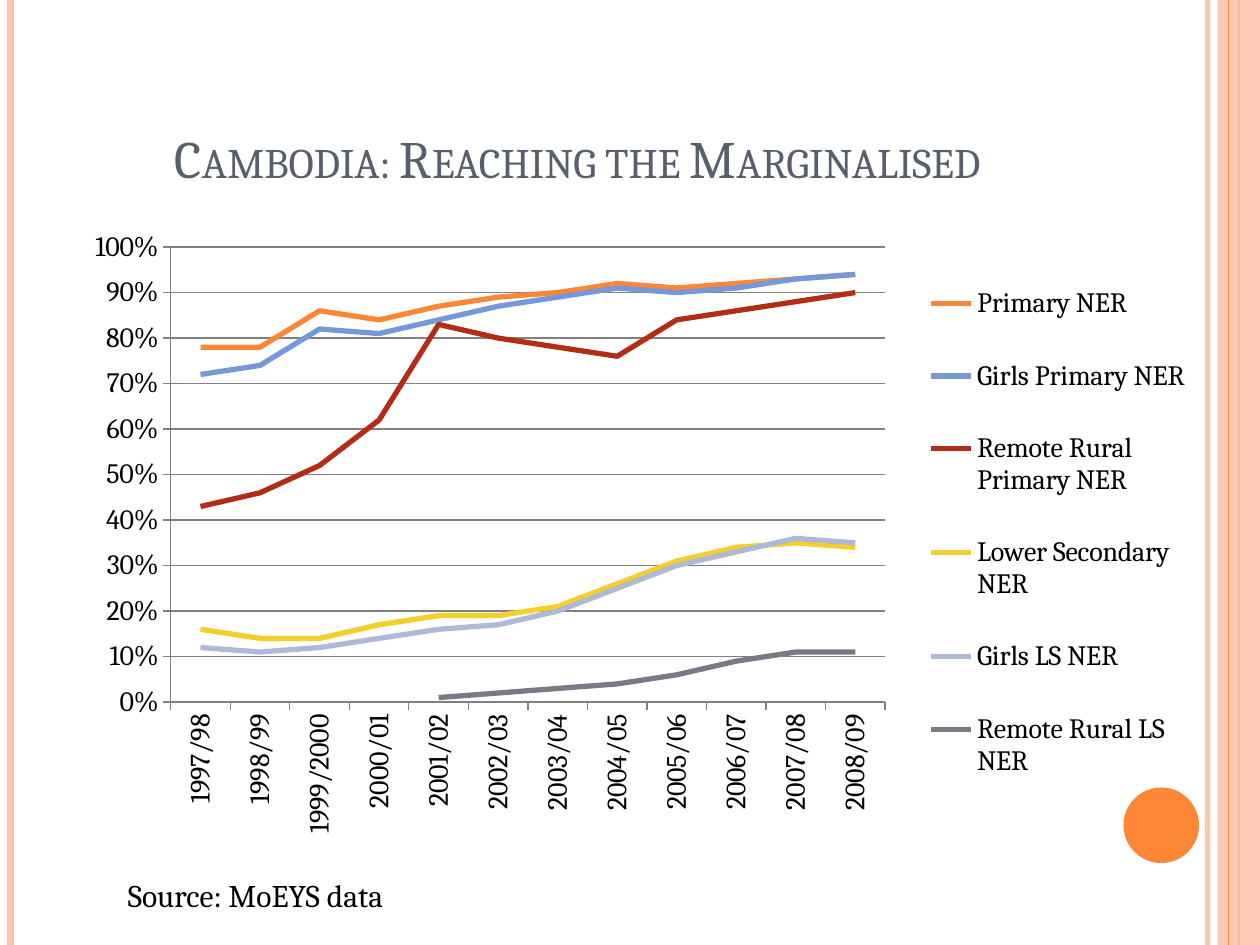
from dataclasses import dataclass

from lxml import etree
from pptx import Presentation
from pptx.chart.chart import Chart
from pptx.chart.data import CategoryChartData
from pptx.dml.color import RGBColor
from pptx.enum.chart import XL_CHART_TYPE, XL_LEGEND_POSITION, XL_TICK_MARK
from pptx.enum.shapes import MSO_CONNECTOR, MSO_SHAPE
from pptx.enum.text import MSO_ANCHOR, PP_ALIGN
from pptx.oxml import parse_xml
from pptx.oxml.ns import nsdecls, qn
from pptx.slide import Slide
from pptx.util import Pt

LINE_CHART = XL_CHART_TYPE.LINE
RIGHT = XL_LEGEND_POSITION.RIGHT
OUTSIDE = XL_TICK_MARK.OUTSIDE
STRAIGHT = MSO_CONNECTOR.STRAIGHT
RECTANGLE, OVAL = MSO_SHAPE.RECTANGLE, MSO_SHAPE.OVAL
TOP, BOTTOM = MSO_ANCHOR.TOP, MSO_ANCHOR.BOTTOM
LEFT, CENTER = PP_ALIGN.LEFT, PP_ALIGN.CENTER

FONT = "Cambria"
BLACK, GREY, SLATE = "000000", "808080", "575F6D"
ORANGE, PEACH, WHITE = "FE8637", "FEC3AE", "FFFFFF"
WIDTH, HEIGHT = 720, 540


@dataclass
class Stripe:
    """A vertical line over the full height of the slide."""
    x: float
    color: str
    weight: float
    opacity: int = 100


@dataclass
class Enrolment:
    """One line of the chart, in whole percents."""
    name: str
    color: str
    percents: list[int | None]


@dataclass
class Caption:
    """A text box with a single paragraph."""
    text: str
    left: float
    top: float
    width: float
    height: float
    size: float
    color: str
    align: PP_ALIGN = LEFT
    anchor: MSO_ANCHOR = TOP
    small_caps: bool = False


@dataclass
class Area:
    """A part of the chart, in fractions of its frame."""
    x: float
    y: float
    w: float
    h: float
    target: str = ""


STRIPES = [Stripe(690, PEACH, 3, 93), Stripe(6, PEACH, 4.5), Stripe(708, ORANGE, 1.5)]
FRONT_STRIPE = Stripe(702, ORANGE, 0.75)
CAPTIONS = [
    Caption("Cambodia: Reaching the Marginalised", 36, 21.6, 588, 90, 30, SLATE, CENTER, BOTTOM, True),
    Caption("Source: MoEYS data", 66, 497, 194, 29, 18, BLACK),
]
YEARS = ["1997/98", "1998/99", "1999/2000", "2000/01", "2001/02", "2002/03",
         "2003/04", "2004/05", "2005/06", "2006/07", "2007/08", "2008/09"]
ENROLMENTS = [
    Enrolment("Primary NER ", ORANGE, [78, 78, 86, 84, 87, 89, 90, 92, 91, 92, 93, 94]),
    Enrolment("Girls Primary NER", "7598D9", [72, 74, 82, 81, 84, 87, 89, 91, 90, 91, 93, 94]),
    Enrolment("Remote Rural Primary NER", "B32C16", [43, 46, 52, 62, 83, 80, 78, 76, 84, 86, 88, 90]),
    Enrolment("Lower Secondary NER", "F5CD2D", [16, 14, 14, 17, 19, 19, 21, 26, 31, 34, 35, 34]),
    Enrolment("Girls LS NER", "AEBAD5", [12, 11, 12, 14, 16, 17, 20, 25, 30, 33, 36, 35]),
    Enrolment("Remote Rural LS NER", "777C84", [None] * 4 + [1, 2, 3, 4, 6, 9, 11, 11]),
]


def rgb(color: str) -> RGBColor:
    """Turn a hex string into a colour."""
    return RGBColor.from_string(color)


def set_opacity(properties: etree._Element, percent: int) -> None:
    """Make the first colour of a shape partly transparent."""
    color = next(properties.iter(qn("a:srgbClr")))
    etree.SubElement(color, qn("a:alpha"), val=str(percent * 1000))


def draw_stripe(page: Slide, stripe: Stripe) -> None:
    """Draw a vertical stripe from top to bottom."""
    line = page.shapes.add_connector(STRAIGHT, Pt(stripe.x), Pt(0), Pt(stripe.x), Pt(HEIGHT))
    line.line.color.rgb = rgb(stripe.color)
    line.line.width = Pt(stripe.weight)
    properties = line._element.spPr
    if stripe.opacity < 100:
        set_opacity(properties, stripe.opacity)
    etree.SubElement(properties, qn("a:effectLst"))


def draw_shape(page: Slide, kind: MSO_SHAPE, left: float, top: float,
               width: float, height: float, color: str, opacity: int = 100) -> None:
    """Draw a filled shape without outline."""
    shape = page.shapes.add_shape(kind, Pt(left), Pt(top), Pt(width), Pt(height))
    shape.shadow.inherit = False
    shape.fill.solid()
    shape.fill.fore_color.rgb = rgb(color)
    shape.line.fill.background()
    if opacity < 100:
        set_opacity(shape._element.spPr, opacity)


def draw_caption(page: Slide, caption: Caption) -> None:
    """Draw one text box."""
    box = page.shapes.add_textbox(Pt(caption.left), Pt(caption.top), Pt(caption.width), Pt(caption.height))
    frame = box.text_frame
    frame.word_wrap = True
    frame.vertical_anchor = caption.anchor
    frame.text = caption.text
    para = frame.paragraphs[0]
    para.alignment = caption.align
    span = para.runs[0]
    span.font.name = FONT
    span.font.size = Pt(caption.size)
    span.font.color.rgb = rgb(caption.color)
    if caption.small_caps:
        span._r.get_or_add_rPr().set("cap", "small")


def layout_xml(area: Area) -> etree._Element:
    """Build the manual layout of a chart part."""
    target = f'<c:layoutTarget val="{area.target}"/>' if area.target else ""
    modes = "".join(f'<c:{side}Mode val="edge"/>' for side in "xy")
    sizes = "".join(f'<c:{side} val="{getattr(area, side)}"/>' for side in "xywh")
    return parse_xml(f'<c:layout {nsdecls("c")}><c:manualLayout>{target}{modes}{sizes}'
                     "</c:manualLayout></c:layout>")


def place_parts(chart: Chart) -> None:
    """Fix the places of the plot and the legend."""
    plot_area = chart._chartSpace.chart.plotArea
    for layout in plot_area.findall(qn("c:layout")):
        plot_area.remove(layout)
    plot_area.insert(0, layout_xml(Area(0.095, 0.041, 0.63, 0.701, "inner")))
    legend = chart.legend._element
    for layout in legend.findall(qn("c:layout")):
        legend.remove(layout)
    legend.find(qn("c:legendPos")).addnext(layout_xml(Area(0.76, 0.04, 0.235, 0.88)))


def draw_chart(page: Slide) -> None:
    """Draw the line chart of enrolment rates."""
    data = CategoryChartData(number_format="0%")
    data.categories = YEARS
    for item in ENROLMENTS:
        data.add_series(item.name, [None if value is None else value / 100 for value in item.percents])
    chart = page.shapes.add_chart(LINE_CHART, Pt(36), Pt(126), Pt(648), Pt(371), data).chart
    chart.has_title = False
    chart.font.name = FONT
    chart.font.size = Pt(16)
    chart.font.color.rgb = rgb(BLACK)
    chart.has_legend = True
    chart.legend.position = RIGHT
    chart.legend.include_in_layout = False
    chart.legend.font.size = Pt(16)
    chart.plots[0].vary_by_categories = False
    for series, item in zip(chart.plots[0].series, ENROLMENTS):
        series.smooth = False
        series.format.line.color.rgb = rgb(item.color)
        series.format.line.width = Pt(3)
    years, rates = chart.category_axis, chart.value_axis
    rates.minimum_scale, rates.maximum_scale, rates.major_unit = 0, 1, 0.1
    rates.tick_labels.number_format = "0%"
    rates.tick_labels.number_format_is_linked = False
    rates.has_major_gridlines = True
    for axis in (years, rates):
        axis.major_tick_mark = OUTSIDE
        axis.tick_labels.font.size = Pt(16)
    for line in (years.format.line, rates.format.line, rates.major_gridlines.format.line):
        line.color.rgb = rgb(GREY)
        line.width = Pt(0.75)
    turned = years._element.find(qn("c:txPr")).find(qn("a:bodyPr"))
    turned.set("rot", "-5400000")
    turned.set("vert", "horz")
    place_parts(chart)


def main() -> None:
    """Build and save the slide."""
    deck = Presentation()
    deck.slide_width, deck.slide_height = Pt(WIDTH), Pt(HEIGHT)
    page = deck.slides.add_slide(deck.slide_layouts[6])
    page.background.fill.solid()
    page.background.fill.fore_color.rgb = rgb(WHITE)
    for stripe in STRIPES:
        draw_stripe(page, stripe)
    draw_shape(page, RECTANGLE, 696, 0, 24, HEIGHT, PEACH, 87)
    draw_stripe(page, FRONT_STRIPE)
    draw_shape(page, OVAL, 642, 450, 43.2, 43.2, ORANGE)
    draw_chart(page)
    for caption in CAPTIONS:
        draw_caption(page, caption)
    deck.save("out.pptx")


if __name__ == "__main__":
    main()
